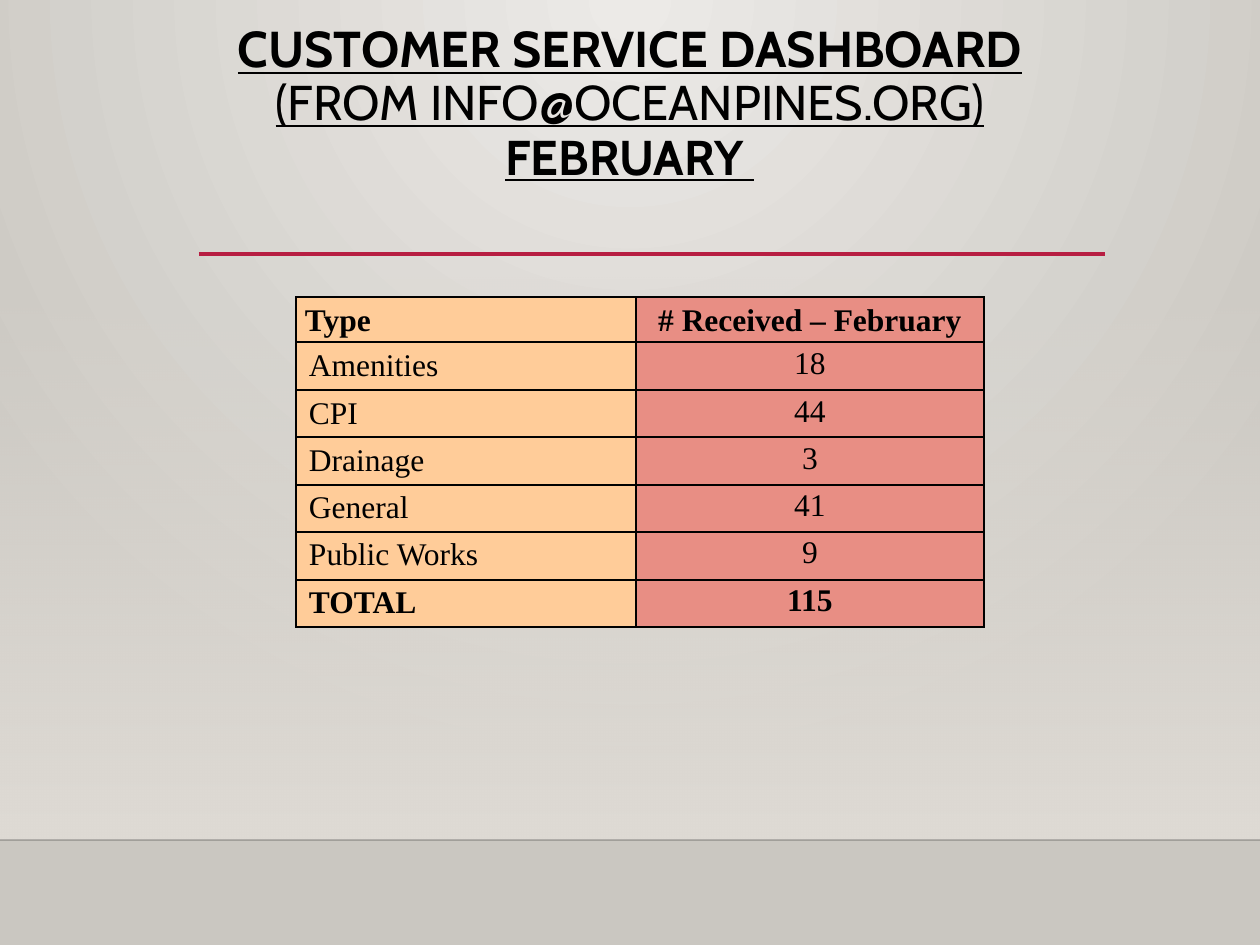
"""Build the February customer service dashboard slide."""
from dataclasses import dataclass

from lxml import etree
from pptx import Presentation
from pptx import util as u
from pptx.dml.color import RGBColor
from pptx.enum import shapes, text
from pptx.oxml import ns

PX = u.Inches(1) // 126


@dataclass
class Theme:
    ink: str = "000000"
    edge: str = "000001"
    light: str = "ECEAE7"
    dark: str = "CAC7C1"
    glow: str = "DFDBD5"
    rule: str = "B71E42"
    peach: str = "FFCC99"
    rose: str = "E88E84"
    head: str = "Cabin"
    body: str = "Times New Roman"
    big: float = 28.8
    mid: float = 27.9
    cell: int = 18


def put(para, words, size, face, bold=False, line=False, align=None):
    run = para.add_run()
    run.text = words
    font = run.font
    font.size, font.name = u.Pt(size), face
    font.bold, font.underline = bold, line
    font.color.rgb = RGBColor.from_string(theme.ink)
    para.alignment = align


def node(root, tag, **attrs):
    return etree.SubElement(root, ns.qn(tag), attrs)


theme = Theme()
mid = text.PP_ALIGN.CENTER
deck = Presentation()
deck.slide_width, deck.slide_height = 1260 * PX, 945 * PX
slide = deck.slides.add_slide(deck.slide_layouts[5])

back = slide.background.fill
back.gradient()
for stop, tone in zip(back.gradient_stops, (theme.light, theme.dark)):
    stop.color.rgb = RGBColor.from_string(tone)
grad = next(slide.element.iter(ns.qn("a:gradFill")))
grad.remove(grad.find(ns.qn("a:lin")))
ring = node(grad, "a:path", path="circle")
node(ring, "a:fillToRect", l="43000", t="0", r="43000", b="100000")

band = slide.shapes.add_shape(
    shapes.MSO_SHAPE.RECTANGLE, 0, 277 * PX, 1260 * PX, 563 * PX)
band.shadow.inherit = False
band.line.fill.background()
band.fill.gradient()
band.fill.gradient_angle = 270
for stop in band.fill.gradient_stops:
    stop.color.rgb = RGBColor.from_string(theme.glow)
node(next(band.element.iter(ns.qn("a:srgbClr"))), "a:alpha", val="0")

for left, right, y, tone, width, alpha in (
        (0, 1260, 840, theme.edge, 1, 20000),
        (199, 1105, 254, theme.rule, 2.5, 100000)):
    bar = slide.shapes.add_connector(
        shapes.MSO_CONNECTOR.STRAIGHT, left * PX, y * PX, right * PX, y * PX)
    bar.line.color.rgb = RGBColor.from_string(tone)
    bar.line.width = u.Pt(width)
    node(next(bar._element.iter(ns.qn("a:srgbClr"))), "a:alpha", val=str(alpha))
    node(bar._element.spPr, "a:effectLst")

title = slide.shapes.title
title.left, title.top = 87 * PX, 18 * PX
title.width, title.height = 1086 * PX, 76 * PX
frame = title.text_frame
frame.word_wrap = True
frame.auto_size = text.MSO_AUTO_SIZE.NONE
frame.vertical_anchor = text.MSO_ANCHOR.TOP
para = frame.paragraphs[0]
para.line_spacing = 0.9
for words, size, bold, wrap in (
        ("CUSTOMER SERVICE DASHBOARD", theme.big, True, True),
        ("(FROM INFO@OCEANPINES.ORG)", theme.mid, False, True),
        ("FEBRUARY", theme.mid, True, False),
        (" ", theme.big, True, False)):
    put(para, words, size, theme.head, bold=bold, line=True, align=mid)
    if wrap:
        para.add_line_break()

rows = (
    ("Type", "# Received – February"),
    ("Amenities", "18"),
    ("CPI", "44"),
    ("Drainage", "3"),
    ("General", "41"),
    ("Public Works", "9"),
    ("TOTAL", "115"),
)
grid = slide.shapes.add_table(
    len(rows), 2, 296 * PX, 297 * PX, 688 * PX, 330 * PX).table
grid.first_row = grid.horz_banding = False
for col, width in zip(grid.columns, (340, 348)):
    col.width = width * PX
for i, row in enumerate(rows):
    top = i == 0
    grid.rows[i].height = (45 if top else 47 + i % 2) * PX
    for j, words in enumerate(row):
        cell = grid.cell(i, j)
        tight = top or j == 1
        cell.margin_left = cell.margin_right = (9 if tight else 13) * PX
        cell.margin_top = (4 if tight else 6) * PX
        cell.margin_bottom = (4 if tight else 5) * PX
        cell.vertical_anchor = (
            text.MSO_ANCHOR.BOTTOM if top else text.MSO_ANCHOR.TOP)
        props = cell._tc.get_or_add_tcPr()
        for side in "LRTB":
            edge = node(props, f"a:ln{side}", w=str(u.Pt(1)))
            node(node(edge, "a:solidFill"), "a:srgbClr", val=theme.ink)
        cell.fill.solid()
        cell.fill.fore_color.rgb = RGBColor.from_string(
            theme.rose if j else theme.peach)
        put(cell.text_frame.paragraphs[0], words, theme.cell, theme.body,
            bold=i in (0, len(rows) - 1), align=mid if j else None)

deck.save("out.pptx")
